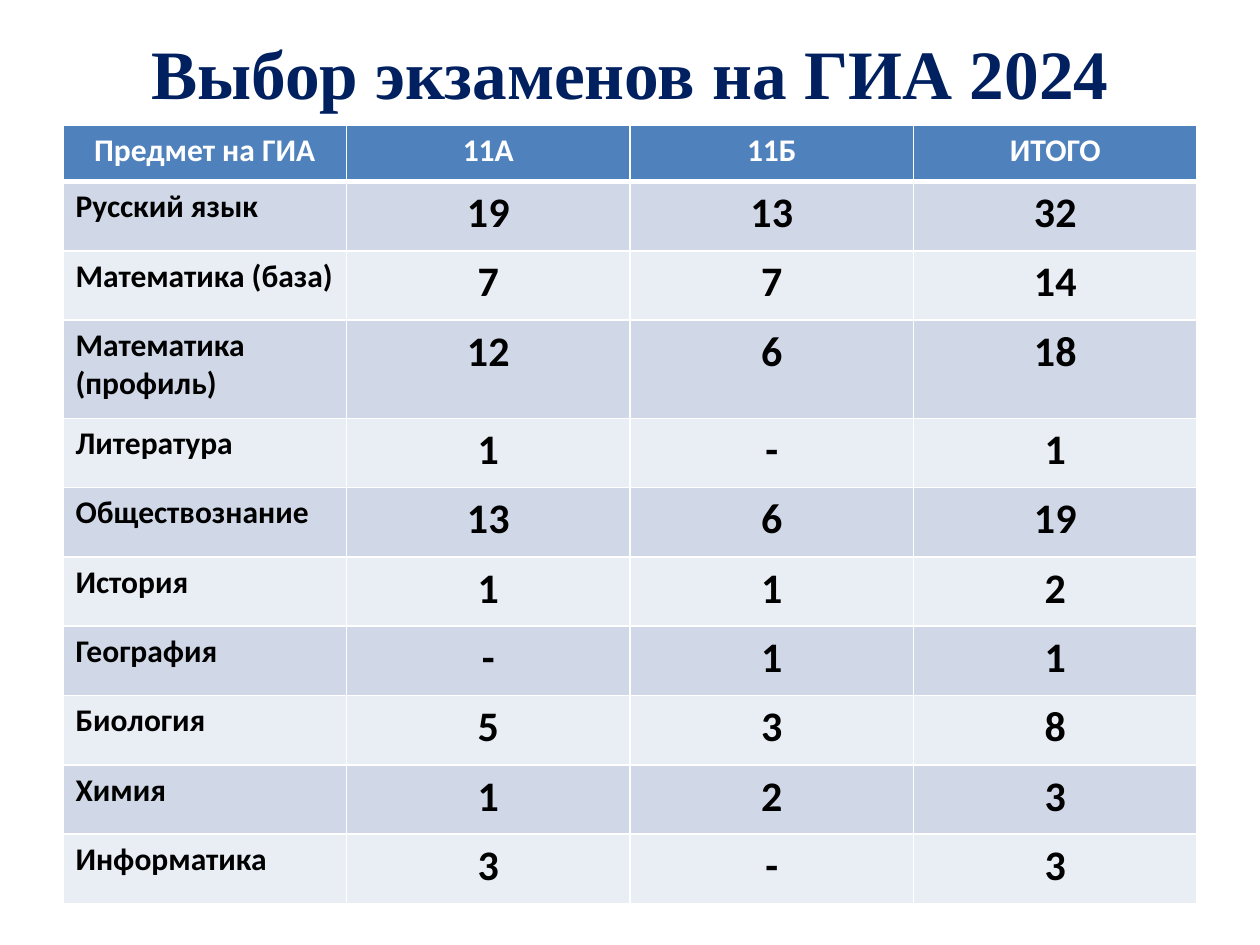
import dataclasses

import lxml.etree
import pptx
import pptx.dml.color
import pptx.enum.text
import pptx.oxml.ns
import pptx.util

COLORS = {
    "title": "002060",
    "header": "4F81BD",
    "odd": "D0D8E8",
    "even": "E9EDF4",
    "text": "000000",
    "white": "FFFFFF",
}
WIDTH, HEIGHT = pptx.util.Inches(10), pptx.util.Inches(7.5)
MARGIN = 0.05  # share of the slide's width
HEADER_HEIGHT, ROW_HEIGHT, TALL_HEIGHT = 0.45, 0.55, 0.78
THIN, THICK = 1, 3
CENTER = pptx.enum.text.PP_ALIGN.CENTER
LEFT = pptx.enum.text.PP_ALIGN.LEFT


@dataclasses.dataclass
class Subject:
    name: str
    class_a: int
    class_b: int
    height: float = ROW_HEIGHT

    def texts(self) -> list[str]:
        counts = (self.class_a, self.class_b, self.class_a + self.class_b)
        return [self.name] + [str(count) if count else "-" for count in counts]


@dataclasses.dataclass
class CellStyle:
    fill: str
    color: str
    size: float
    align: pptx.enum.text.PP_ALIGN
    top: float = THIN
    bottom: float = THIN


HEADINGS = ["Предмет на ГИА", "11А", "11Б", "ИТОГО"]
SUBJECTS = [
    Subject("Русский язык", 19, 13),
    Subject("Математика (база)", 7, 7),
    Subject("Математика (профиль)", 12, 6, TALL_HEIGHT),
    Subject("Литература", 1, 0),
    Subject("Обществознание", 13, 6),
    Subject("История", 1, 1),
    Subject("География", 0, 1),
    Subject("Биология", 5, 3),
    Subject("Химия", 1, 2),
    Subject("Информатика", 3, 0),
]


def format_font(font, name: str, size: float, color: str) -> None:
    font.name, font.size, font.bold = name, pptx.util.Pt(size), True
    font.color.rgb = pptx.dml.color.RGBColor.from_string(COLORS[color])


def add_border(cell, side: str, width: float) -> None:
    qn = pptx.oxml.ns.qn
    properties = cell._tc.get_or_add_tcPr()
    line = lxml.etree.SubElement(properties, qn(f"a:ln{side}"), w=str(pptx.util.Pt(width)))
    fill = lxml.etree.SubElement(line, qn("a:solidFill"))
    lxml.etree.SubElement(fill, qn("a:srgbClr"), val=COLORS["white"])


def fill_cell(cell, text: str, style: CellStyle) -> None:
    # Borders come before the fill in the cell properties
    for side, width in (("L", THIN), ("R", THIN), ("T", style.top), ("B", style.bottom)):
        add_border(cell, side, width)
    cell.fill.solid()
    cell.fill.fore_color.rgb = pptx.dml.color.RGBColor.from_string(COLORS[style.fill])
    cell.text = text
    para = cell.text_frame.paragraphs[0]
    para.alignment = style.align
    format_font(para.font, "Calibri", style.size, style.color)


def add_title(page, text: str) -> None:
    title = page.shapes.title
    title.left, title.top = int(WIDTH * MARGIN), int(HEIGHT * 0.04)
    title.width, title.height = int(WIDTH * (1 - 2 * MARGIN)), int(HEIGHT * 0.072)
    frame = title.text_frame
    frame.text = text
    frame.vertical_anchor = pptx.enum.text.MSO_ANCHOR.MIDDLE
    frame.auto_size = pptx.enum.text.MSO_AUTO_SIZE.NONE
    para = frame.paragraphs[0]
    para.alignment = CENTER
    format_font(para.font, "Times New Roman", 39.6, "title")


def add_exam_table(page) -> None:
    heights = [HEADER_HEIGHT] + [subject.height for subject in SUBJECTS]
    table = page.shapes.add_table(
        len(heights), len(HEADINGS), int(WIDTH * MARGIN), pptx.util.Inches(0.99),
        int(WIDTH * (1 - 2 * MARGIN)), pptx.util.Inches(sum(heights)),
    ).table
    for row, height in zip(table.rows, heights):
        row.height = pptx.util.Inches(height)

    # Header row
    heading_style = CellStyle("header", "white", 18, CENTER, bottom=THICK)
    for column, heading in enumerate(HEADINGS):
        fill_cell(table.cell(0, column), heading, heading_style)

    # Subject rows in alternating bands
    for row, subject in enumerate(SUBJECTS, start=1):
        band = "odd" if row % 2 else "even"
        top = THICK if row == 1 else THIN
        name_style = CellStyle(band, "text", 18, LEFT, top)
        count_style = CellStyle(band, "text", 24, CENTER, top)
        for column, text in enumerate(subject.texts()):
            fill_cell(table.cell(row, column), text, count_style if column else name_style)


def main() -> None:
    deck = pptx.Presentation()
    deck.slide_width, deck.slide_height = WIDTH, HEIGHT
    page = deck.slides.add_slide(deck.slide_layouts.get_by_name("Title Only"))
    add_title(page, "Выбор экзаменов на ГИА 2024")
    add_exam_table(page)
    deck.save("out.pptx")


if __name__ == "__main__":
    main()
